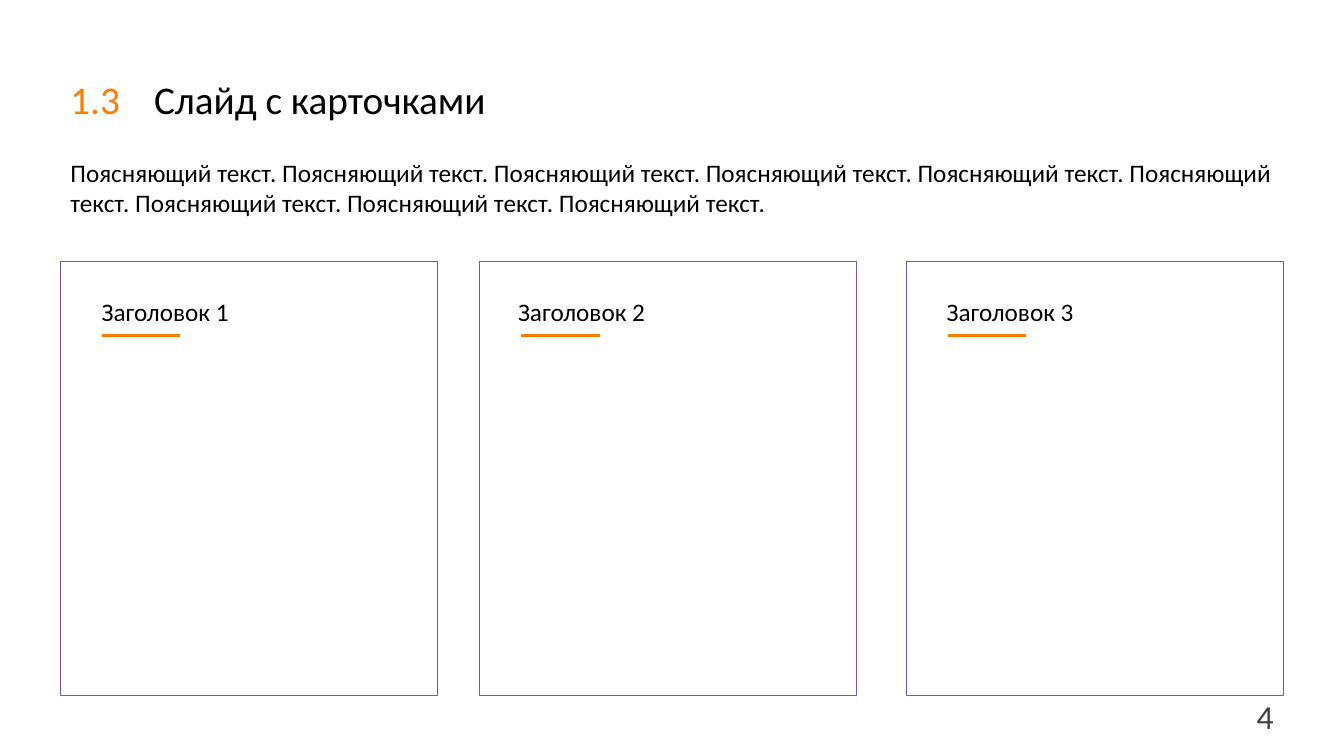
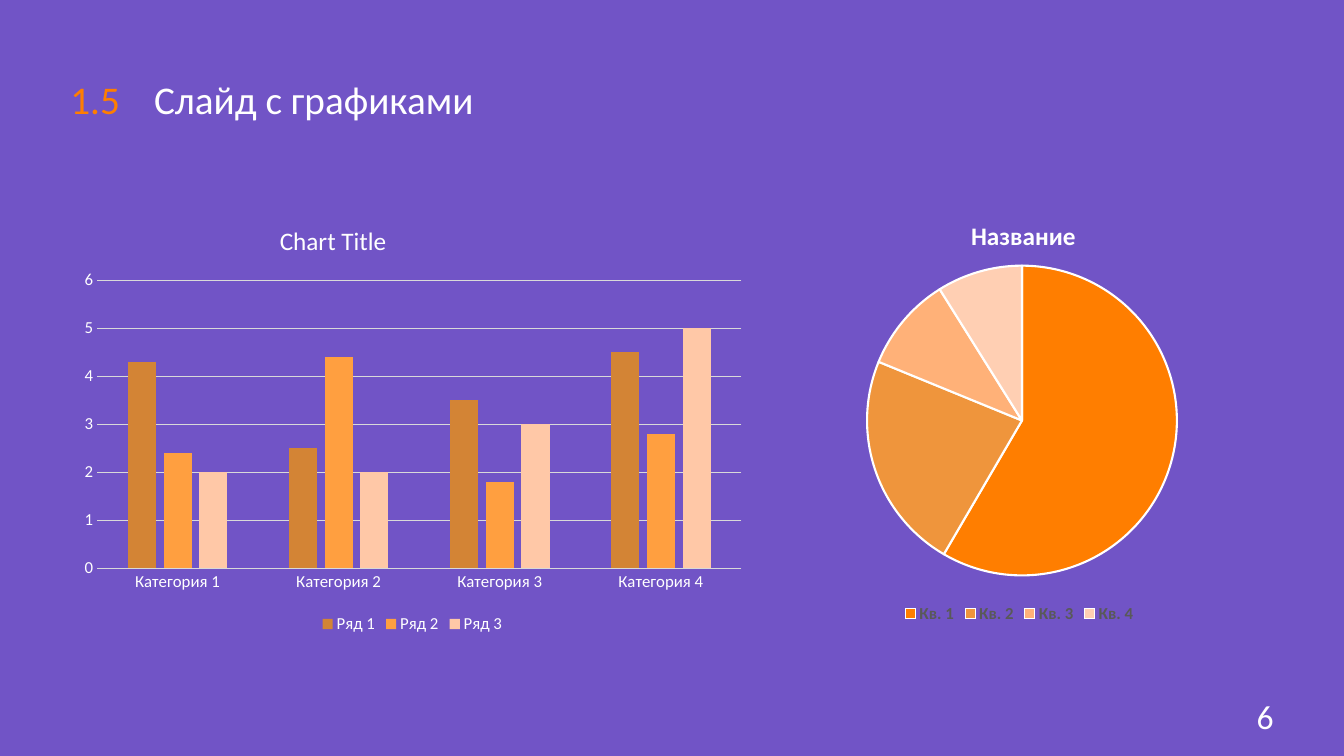
from dataclasses import dataclass

from lxml import etree
from pptx import Presentation
from pptx import util as u
from pptx.chart import chart as charts
from pptx.chart import data
from pptx.dml import color
from pptx.enum import chart as kinds
from pptx.enum import shapes, text
from pptx.oxml import ns
from pptx.slide import Slide

# Shared look
EMU_PER_PX = 9144  # 100 px to the inch
FONT = "Calibri"
WHITE, BLACK = "FFFFFF", "000000"
VIOLET, ORANGE = "7154C6", "FF7E00"
DARK_GREY, GREY, PALE_GREY = "404040", "595959", "D9D9D9"

# Card grid
CARD_TOP, CARD_WIDTH, CARD_HEIGHT = 259, 374, 431
RULE_INSET, RULE_TOP, RULE_WIDTH = 41, 333, 78


@dataclass(frozen=True)
class Area:
    left: int
    top: int
    width: int
    height: int


@dataclass(frozen=True)
class Style:
    size: int
    color: str
    align: text.PP_ALIGN = text.PP_ALIGN.LEFT
    anchor: text.MSO_ANCHOR = text.MSO_ANCHOR.TOP
    spacing: float = 1.0
    grow: bool = False


@dataclass(frozen=True)
class Card:
    left: int
    heading_left: int
    heading: str


@dataclass(frozen=True)
class ChartLook:
    title: str
    title_at: tuple[float, float]
    plot_at: tuple[float, float, float, float]
    legend_color: str
    bold: bool


CARDS = (
    Card(60, 91, "Заголовок 1"),
    Card(476, 504, "Заголовок 2"),
    Card(899, 929, "Заголовок 3"),
)
COLUMN_LOOK = ChartLook("Chart Title", (0.3, 0.04), (0.04, 0.18, 0.94, 0.66), WHITE, False)
PIE_LOOK = ChartLook("Название", (0.4, 0.05), (0.21, 0.17, 0.59, 0.71), GREY, True)
COLUMN_COLORS = ("D38435", "FF9F40", "FFC8A7")
PIE_COLORS = (ORANGE, "EF953C", "FFB178", "FFCFB3")


def px(length: int) -> u.Emu:
    return u.Emu(length * EMU_PER_PX)


def rgb(value: str) -> color.RGBColor:
    return color.RGBColor.from_string(value)


def place(area: Area) -> tuple[u.Emu, ...]:
    return px(area.left), px(area.top), px(area.width), px(area.height)


def set_font(font: text.Any if hasattr(text, "Any") else object,
             size: int, value: str, bold: bool = False) -> None:
    font.name, font.size, font.bold = FONT, u.Pt(size), bold
    font.color.rgb = rgb(value)


# Slide parts
def add_text(page: Slide, area: Area, words: str, style: Style) -> None:
    frame = page.shapes.add_textbox(*place(area)).text_frame
    frame.word_wrap = True
    frame.vertical_anchor = style.anchor
    if style.grow:
        frame.auto_size = text.MSO_AUTO_SIZE.SHAPE_TO_FIT_TEXT
    frame.text = words
    para = frame.paragraphs[0]
    para.alignment, para.line_spacing = style.align, style.spacing
    set_font(para.runs[0].font, style.size, style.color)


def add_page(deck: Presentation, background: str, section: str, title: str,
             title_color: str, number: str, number_color: str) -> Slide:
    page = deck.slides.add_slide(deck.slide_layouts[6])
    page.background.fill.solid()
    page.background.fill.fore_color.rgb = rgb(background)
    for area, words, value in (
        (Area(143, 80, 624, 47), title, title_color),
        (Area(60, 80, 83, 47), section, ORANGE),
    ):
        add_text(page, area, words,
                 Style(28, value, anchor=text.MSO_ANCHOR.BOTTOM, spacing=0.9))
    add_text(page, Area(1132, 690, 141, 40), number,
             Style(24, number_color, text.PP_ALIGN.RIGHT, text.MSO_ANCHOR.MIDDLE))
    return page


def add_card(page: Slide, card: Card) -> None:
    box = page.shapes.add_shape(
        shapes.MSO_SHAPE.RECTANGLE,
        *place(Area(card.left, CARD_TOP, CARD_WIDTH, CARD_HEIGHT)))
    box.shadow.inherit = False
    box.fill.background()
    box.line.color.rgb, box.line.width = rgb(VIOLET), u.Pt(0.75)

    start = card.left + RULE_INSET
    rule = page.shapes.add_connector(
        shapes.MSO_CONNECTOR.STRAIGHT,
        px(start), px(RULE_TOP), px(start + RULE_WIDTH), px(RULE_TOP))
    rule.line.color.rgb, rule.line.width = rgb(ORANGE), u.Pt(2.25)
    etree.SubElement(rule._element.spPr, ns.qn("a:effectLst"))

    add_text(page, Area(card.heading_left, 289, 242, 40), card.heading,
             Style(18, BLACK, grow=True))


# Chart parts
def set_layout(parent: etree._Element, index: int, values: dict[str, str]) -> None:
    for old in parent.findall(ns.qn("c:layout")):
        parent.remove(old)
    layout = etree.Element(ns.qn("c:layout"))
    manual = etree.SubElement(layout, ns.qn("c:manualLayout"))
    for tag, value in values.items():
        etree.SubElement(manual, ns.qn(f"c:{tag}")).set("val", value)
    parent.insert(index, layout)


def add_chart(page: Slide, kind: kinds.XL_CHART_TYPE, area: Area,
              content: data.CategoryChartData, look: ChartLook) -> charts.Chart:
    chart = page.shapes.add_chart(kind, *place(area), content).chart
    set_font(chart.font, 10, WHITE)
    chart.has_title = True
    frame = chart.chart_title.text_frame
    frame.text = look.title
    set_font(frame.paragraphs[0].runs[0].font, 18, WHITE, look.bold)
    chart.chart_title.include_in_layout = False

    chart.has_legend = True
    chart.legend.position = kinds.XL_LEGEND_POSITION.BOTTOM
    chart.legend.include_in_layout = False
    set_font(chart.legend.font, 12, look.legend_color, look.bold)

    edges = {"xMode": "edge", "yMode": "edge"}
    left, top = look.title_at
    set_layout(chart.chart_title._element, 1, {**edges, "x": str(left), "y": str(top)})
    sizes = dict(zip("xywh", map(str, look.plot_at)))
    set_layout(chart._chartSpace.chart.plotArea, 0,
               {"layoutTarget": "inner", **edges, **sizes})
    return chart


def add_columns(page: Slide) -> None:
    content = data.CategoryChartData()
    content.categories = [f"Категория {number}" for number in range(1, 5)]
    content.add_series("Ряд 1", (4.3, 2.5, 3.5, 4.5))
    content.add_series("Ряд 2", (2.4, 4.4, 1.8, 2.8))
    content.add_series("Ряд 3", (2, 2, 3, 5))
    chart = add_chart(page, kinds.XL_CHART_TYPE.COLUMN_CLUSTERED,
                      Area(69, 200, 680, 433), content, COLUMN_LOOK)
    plot = chart.plots[0]
    plot.vary_by_categories, plot.gap_width, plot.overlap = False, 219, -27
    for series, value in zip(plot.series, COLUMN_COLORS):
        series.format.fill.solid()
        series.format.fill.fore_color.rgb = rgb(value)

    for axis in (chart.category_axis, chart.value_axis):
        axis.major_tick_mark = axis.minor_tick_mark = kinds.XL_TICK_MARK.NONE
        set_font(axis.tick_labels.font, 12, WHITE)
    scale = chart.value_axis
    scale.minimum_scale, scale.maximum_scale, scale.major_unit = 0, 6, 1
    scale.format.line.fill.background()
    for line in (chart.category_axis.format.line, scale.major_gridlines.format.line):
        line.color.rgb, line.width = rgb(PALE_GREY), u.Pt(0.75)


def add_pie(page: Slide) -> None:
    content = data.CategoryChartData()
    content.categories = [f"Кв. {number}" for number in range(1, 5)]
    content.add_series("Series 1", (59, 23, 10, 9))
    chart = add_chart(page, kinds.XL_CHART_TYPE.PIE,
                      Area(749, 190, 524, 433), content, PIE_LOOK)
    plot = chart.plots[0]
    plot.vary_by_categories = True
    for index, value in enumerate(PIE_COLORS):
        wedge = plot.series[0].points[index].format
        wedge.fill.solid()
        wedge.fill.fore_color.rgb = rgb(value)
        wedge.line.color.rgb, wedge.line.width = rgb(WHITE), u.Pt(1.5)


# Slides
def build_cards(deck: Presentation) -> None:
    page = add_page(deck, WHITE, "1.3", "Слайд с карточками", BLACK, "4", DARK_GREY)
    add_text(page, Area(60, 151, 1213, 71), " ".join(["Поясняющий текст."] * 9),
             Style(18, BLACK, grow=True))
    for card in CARDS:
        add_card(page, card)


def build_charts(deck: Presentation) -> None:
    page = add_page(deck, VIOLET, "1.5", "Слайд с графиками", WHITE, "6", WHITE)
    add_pie(page)
    add_columns(page)


def main() -> None:
    deck = Presentation()
    deck.slide_width, deck.slide_height = px(1333), px(750)
    build_cards(deck)
    build_charts(deck)
    deck.save("out.pptx")


if __name__ == "__main__":
    main()
